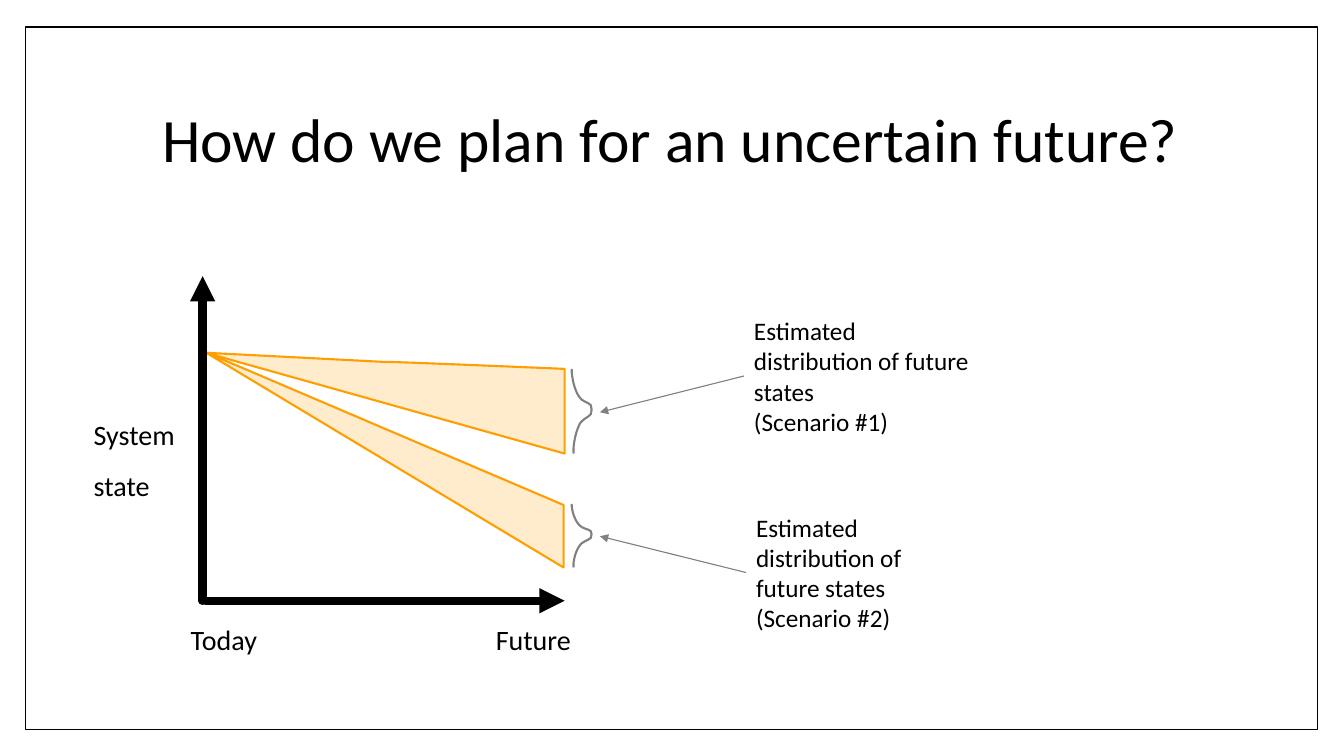
from lxml import etree
from pptx import Presentation
from pptx.dml.color import RGBColor
from pptx.enum.shapes import MSO_CONNECTOR, MSO_SHAPE
from pptx.enum.text import MSO_ANCHOR, PP_ALIGN
from pptx.oxml.ns import qn
from pptx.util import Pt

PX = 9144
BLACK = RGBColor(0, 0, 0)
WHITE = RGBColor(255, 255, 255)
GREY = RGBColor(128, 128, 128)
ORANGE = RGBColor(0xFE, 0x9E, 0x00)
CREAM = RGBColor(0xFF, 0xEC, 0xCC)
LEFT, CENTER = PP_ALIGN.LEFT, PP_ALIGN.CENTER
MIDDLE = MSO_ANCHOR.MIDDLE
RECT, STRAIGHT = MSO_SHAPE.RECTANGLE, MSO_CONNECTOR.STRAIGHT

TITLE = "How do we plan for an uncertain future?"
TITLE_BOX = (125, 67, 1080, 148)
FRAME_BOX = (25, 27, 1282, 697)
ESTIMATE = "Estimated distribution of future states"
NOTE_FORMAT = {"size": 18, "align": LEFT, "spacing": 1, "after": 0}
LABEL_FORMAT = {"size": 20, "align": LEFT, "spacing": 1.5, "after": 8}
TICK_FORMAT = {**LABEL_FORMAT, "align": CENTER}
NOTES = [
    ((738, 308, 234, 131), "(Scenario #1)", (738, 373, 595, 409)),
    ((740, 503, 232, 131), "(Scenario #2)", (740, 568, 595, 532)),
]
LABELS = [
    ((83, 393, 111, 112), "System state", LABEL_FORMAT),
    ((169, 596, 106, 73), "Today", TICK_FORMAT),
    ((476, 596, 106, 73), "Future", TICK_FORMAT),
]
TIME_AXIS = (204, 596, 560, 596)
STATE_AXIS = (201, 596, 201, 274)
CONE_1 = [
    (204, 350), (560, 368), (204, 351), (560, 366),
    (560, 410), (560, 405), (560, 450),
]
CONE_2 = [(203, 349), (559, 563), (559, 501)]
BRACE = [
    (0, 0), (0, 9), (3, 21), (7, 27), (10, 33), (17, 33), (19, 36),
    (20, 39), (20, 41), (19, 45), (17, 48), (9, 50), (7, 57),
    (4, 63), (1, 77), (2, 84),
]
BRACE_LEFT = 567
BRACE_SPANS = [(366, 84), (500, 63)]


def emu(values):
    return [round(v * PX) for v in values]


def style_line(line, color, width):
    line.color.rgb = color
    line.width = Pt(width)


def style_shape(sp, fill, color, width):
    sp.shadow.inherit = False
    if fill is None:
        sp.fill.background()
    else:
        sp.fill.solid()
        sp.fill.fore_color.rgb = fill
    style_line(sp.line, color, width)


def write(tf, lines, size, align, spacing, after):
    tf.word_wrap = True
    for i, text in enumerate(lines):
        p = tf.paragraphs[0] if i == 0 else tf.add_paragraph()
        paragraph_format = {"alignment": align, "line_spacing": spacing, "space_after": Pt(after)}
        for name, value in paragraph_format.items():
            setattr(p, name, value)
        r = p.add_run()
        r.text = text
        for name, value in {"name": "Calibri", "size": Pt(size)}.items():
            setattr(r.font, name, value)
        r.font.color.rgb = BLACK


def bend(sp):
    segments = list(sp._element.iter(qn("a:lnTo")))
    for i in range(0, len(segments), 3):
        curve = etree.Element(qn("a:cubicBezTo"))
        segments[i].addprevious(curve)
        for segment in segments[i:i + 3]:
            curve.append(segment[0])
            segment.getparent().remove(segment)


def add_outline(shapes, points, curved, closed, fill, color):
    start, *rest = [emu(p) for p in points]
    builder = shapes.build_freeform(*start)
    builder.add_line_segments(rest, close=closed)
    sp = builder.convert_to_shape()
    style_shape(sp, fill, color, 1.5)
    if curved:
        bend(sp)


def add_arrow(shapes, ends, color, width):
    sp = shapes.add_connector(STRAIGHT, *emu(ends))
    style_line(sp.line, color, width)
    etree.SubElement(sp.line._get_or_add_ln(), qn("a:tailEnd"), type="triangle")
    etree.SubElement(sp._element.spPr, qn("a:effectLst"))
    return sp


def add_axis(shapes, ends):
    sp = add_arrow(shapes, ends, BLACK, 6)
    sp.line._get_or_add_ln().set("cap", "rnd")


def add_text(shapes, box, lines, text_format):
    sp = shapes.add_textbox(*emu(box))
    write(sp.text_frame, lines, **text_format)


def main():
    prs = Presentation()
    prs.slide_width, prs.slide_height = emu((1333, 750))
    layout = prs.slide_layouts[5]
    s = prs.slides.add_slide(layout)

    frame = s.shapes.add_shape(RECT, *emu(FRAME_BOX))
    style_shape(frame, WHITE, BLACK, 1)
    layout.placeholders[0]._element.addprevious(frame._element)

    title = s.shapes.title
    for name, value in zip(("left", "top", "width", "height"), emu(TITLE_BOX)):
        setattr(title, name, value)
    title.text_frame.vertical_anchor = MIDDLE
    write(title.text_frame, [TITLE], 44, CENTER, 0.9, 0)

    for box, scenario, ends in NOTES:
        add_text(s.shapes, box, [ESTIMATE, scenario], NOTE_FORMAT)
        add_arrow(s.shapes, ends, GREY, 0.79)

    diagram = s.shapes.add_group_shape().shapes
    for box, text, text_format in LABELS:
        add_text(diagram, box, [text], text_format)
    add_axis(diagram, TIME_AXIS)
    for cone, curved in ((CONE_1, True), (CONE_2, False)):
        add_outline(diagram, cone, curved, True, CREAM, ORANGE)
    for top, height in BRACE_SPANS:
        ratio = height / BRACE[-1][1]
        brace = [(BRACE_LEFT + x, top + y * ratio) for x, y in BRACE]
        add_outline(diagram, brace, True, False, None, GREY)
    add_axis(diagram, STATE_AXIS)

    prs.save("out.pptx")


if __name__ == "__main__":
    main()
